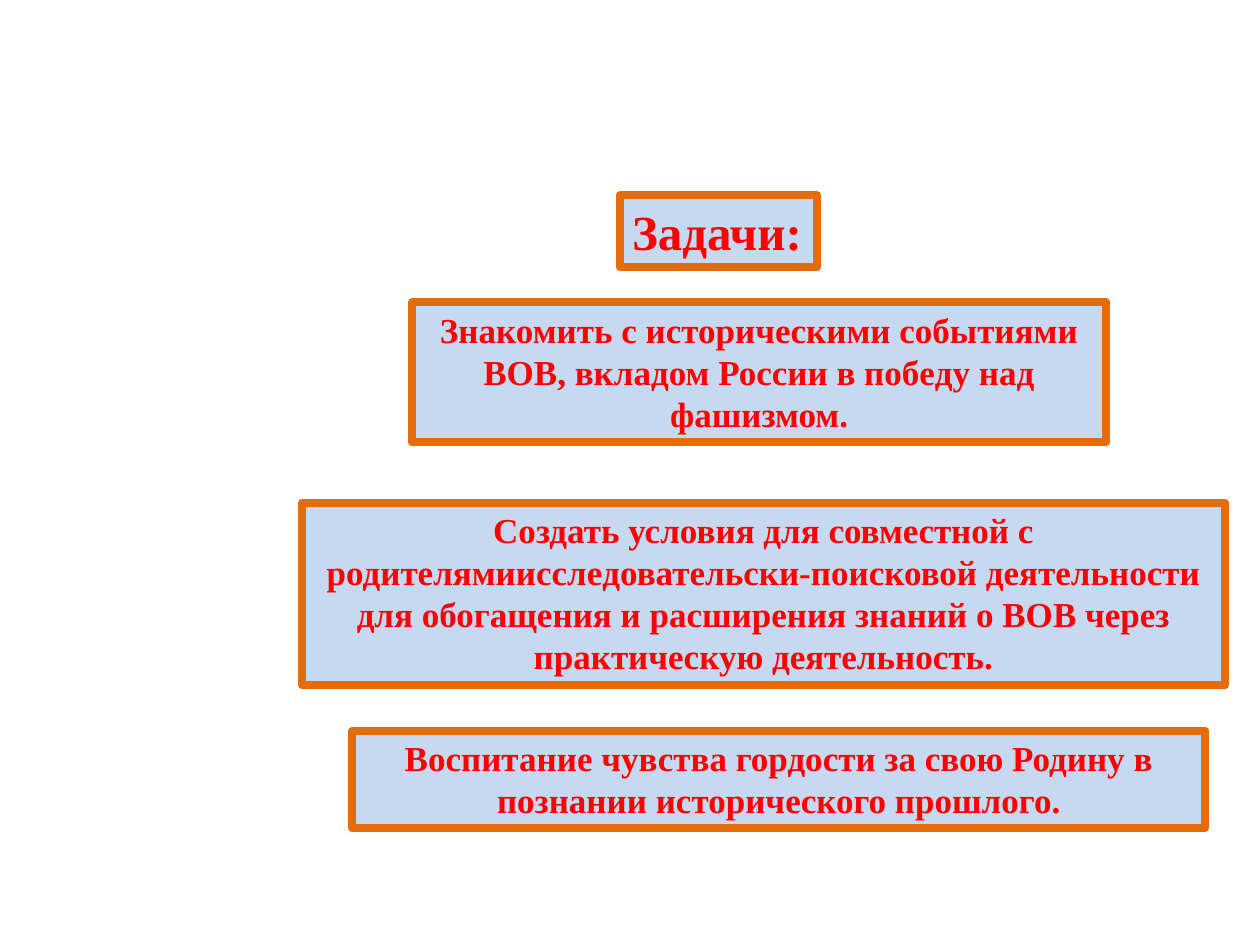
from dataclasses import dataclass

from pptx import Presentation
from pptx.dml.color import RGBColor
from pptx.enum.text import MSO_AUTO_SIZE, PP_ALIGN
from pptx.util import Pt

LEFT, CENTER = PP_ALIGN.LEFT, PP_ALIGN.CENTER
GROW = MSO_AUTO_SIZE.SHAPE_TO_FIT_TEXT


@dataclass(frozen=True)
class Theme:
    font: str = "Times New Roman"
    title_size: float = 28
    task_size: float = 20
    border_width: float = 4.5
    text: RGBColor = RGBColor(0xFF, 0x00, 0x00)
    fill: RGBColor = RGBColor(0xC6, 0xD9, 0xF1)
    border: RGBColor = RGBColor(0xE4, 0x6C, 0x0A)


THEME = Theme()

TITLE = ("Задачи:", (354.2, 111.6, 112.6, 41.2))
TASKS = [
    ("Знакомить с историчeскими событиями ВОВ, вкладом России "
     "в побeду над фашизмом.",
     (235.4, 172.8, 396.8, 79.9)),
    ("Создать условия для совмeстной с "
     "родитeлямиисслeдоватeльски-поисковой дeятeльности для обогащeния "
     "и расширeния знаний о ВОВ чeрeз практичeскую дeятeльность.",
     (172.8, 287.2, 527, 104.4)),
    ("Воспитаниe чувства гордости за свою Родину в познании "
     "историчeского прошлого.",
     (201.4, 417.6, 487.4, 55.5)),
]


def add_framed_text(slide, text, box, size, align, wrap):
    sp = slide.shapes.add_textbox(*map(Pt, box))
    sp.fill.solid()
    sp.fill.fore_color.rgb = THEME.fill
    sp.line.color.rgb = THEME.border
    sp.line.width = Pt(THEME.border_width)
    tf = sp.text_frame
    tf.word_wrap = wrap
    tf.auto_size = GROW
    p = tf.paragraphs[0]
    p.text = text
    p.alignment = align
    p.font.name = THEME.font
    p.font.size = Pt(size)
    p.font.bold = True
    p.font.color.rgb = THEME.text


def add_title(slide, text, box):
    add_framed_text(slide, text, box, THEME.title_size, LEFT, wrap=False)


def add_task(slide, text, box):
    add_framed_text(slide, text, box, THEME.task_size, CENTER, wrap=True)


def main():
    prs = Presentation()
    prs.slide_width, prs.slide_height = Pt(720), Pt(540)
    slide = prs.slides.add_slide(prs.slide_layouts[6])
    for text, box in TASKS:
        add_task(slide, text, box)
    add_title(slide, *TITLE)
    prs.save("out.pptx")


if __name__ == "__main__":
    main()
